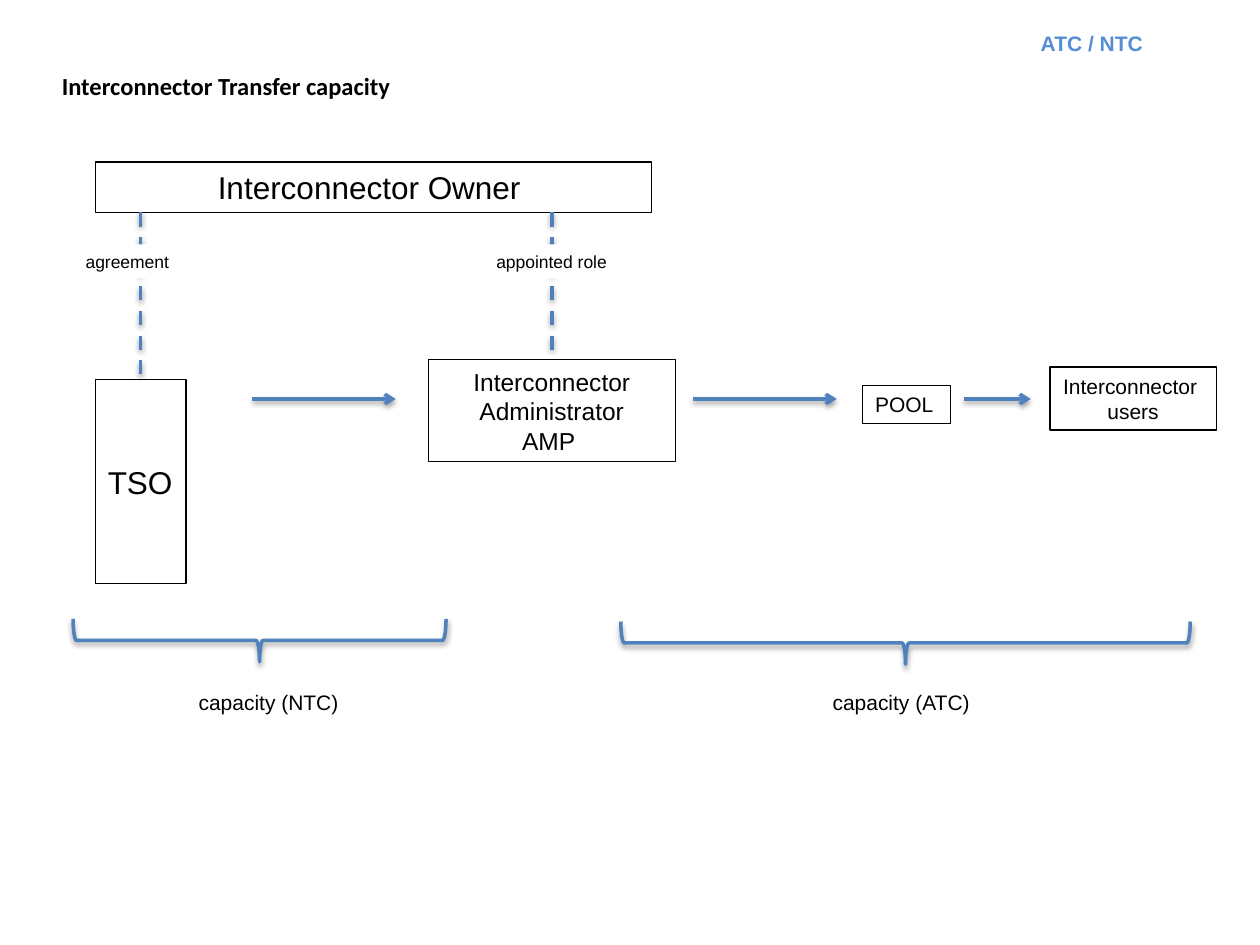
import pptx
import pptx.util
import pptx.dml.color
import pptx.enum.dml
import pptx.enum.shapes
import pptx.enum.text
import pptx.oxml
import pptx.oxml.ns

Pt = pptx.util.Pt
SHAPE = pptx.enum.shapes.MSO_SHAPE
ALIGN = pptx.enum.text.PP_ALIGN
ANCHOR = pptx.enum.text.MSO_ANCHOR
RGB = pptx.dml.color.RGBColor.from_string

theme = {
    "ink": RGB("000000"), "paper": RGB("FFFFFF"),
    "blue": RGB("4F81BD"), "header": RGB("558ED5"),
    "large": Pt(18), "medium": Pt(14), "normal": Pt(12), "small": Pt(10),
    "outline": Pt(0.75), "stroke": Pt(2),
}


def write(sp, lines, size, align=ALIGN.LEFT, wrap=True, anchor=ANCHOR.TOP, **font):
    tf = sp.text_frame
    tf.word_wrap, tf.vertical_anchor = wrap, anchor
    tf.text = "\n".join(lines)
    style = {"name": "Arial", "size": theme[size], "bold": False, **font}
    color = style.pop("color", "ink")
    for p in tf.paragraphs:
        p.alignment = align
        for r in p.runs:
            for key, value in style.items():
                setattr(r.font, key, value)
            r.font.color.rgb = theme[color]


def stroke(sp):
    sp.line.color.rgb = theme["blue"]
    sp.line.width = theme["stroke"]
    spPr = sp._element.spPr
    for old in spPr.findall(pptx.oxml.ns.qn("a:effectLst")):
        spPr.remove(old)
    spPr.append(pptx.oxml.parse_xml(
        f'<a:effectLst {pptx.oxml.ns.nsdecls("a")}>'
        '<a:outerShdw blurRad="40000" dist="20000" dir="5400000" rotWithShape="0">'
        '<a:srgbClr val="000000"><a:alpha val="38000"/></a:srgbClr>'
        '</a:outerShdw></a:effectLst>'))


prs = pptx.Presentation()
prs.slide_width, prs.slide_height = Pt(720), Pt(540)
s = prs.slides.add_slide(prs.slide_layouts[5])

title = s.shapes.title
frame = {"left": 28.1, "top": 36.7, "width": 226.8, "height": 24.5}
for key, value in frame.items():
    setattr(title, key, Pt(value))
write(title, ["Interconnector Transfer capacity"], "medium", name="Calibri", bold=True)
title.text_frame.auto_size = pptx.enum.text.MSO_AUTO_SIZE.NONE

boxes = {}
for name, lines, size, align, wrap, rect in [
    ("owner", ["Interconnector Owner "], "large", ALIGN.CENTER, True, (54.7, 92.6, 317.5, 28.8)),
    ("admin", ["Interconnector Administrator", "AMP "], "medium", ALIGN.CENTER, True,
     (244.8, 205.6, 141.1, 58.3)),
    ("tso", ["TSO"], "large", ALIGN.LEFT, False, (54.5, 217, 51.8, 116.6)),
    ("market", ["POOL"], "normal", ALIGN.LEFT, False, (493, 220.3, 50.4, 21.6)),
    ("users", ["Interconnector ", "users"], "normal", ALIGN.CENTER, False,
     (600, 209.8, 95, 36)),
]:
    sp = s.shapes.add_shape(SHAPE.RECTANGLE, *map(Pt, rect))
    sp.shadow.inherit = False
    sp.fill.background()
    sp.line.color.rgb, sp.line.width = theme["ink"], theme["outline"]
    write(sp, lines, size, align, wrap, ANCHOR.MIDDLE)
    boxes[name] = sp

flow_y = Pt(228)
for x1, x2 in [(144.3, 226.1), (396, 478.1), (550.6, 589)]:
    arrow = s.shapes.add_connector(
        pptx.enum.shapes.MSO_CONNECTOR.STRAIGHT, Pt(x1), flow_y, Pt(x2), flow_y)
    stroke(arrow)
    arrow.line._get_or_add_ln().append(pptx.oxml.parse_xml(
        f'<a:tailEnd {pptx.oxml.ns.nsdecls("a")} type="arrow"/>'))

owner_bottom = boxes["owner"].top + boxes["owner"].height
for name in ["admin", "tso"]:
    box = boxes[name]
    x = box.left + box.width // 2
    link = s.shapes.add_connector(
        pptx.enum.shapes.MSO_CONNECTOR.STRAIGHT, x, owner_bottom, x, box.top)
    link.end_connect(box, 0)
    stroke(link)
    link.line.dash_style = pptx.enum.dml.MSO_LINE.DASH

for text, left, width in [("appointed role", 276.5, 77.8), ("agreement", 41.8, 65.5)]:
    label = s.shapes.add_shape(SHAPE.RECTANGLE, Pt(left), Pt(139.7), Pt(width), Pt(19.4))
    label.shadow.inherit = False
    label.fill.solid()
    label.fill.fore_color.rgb = theme["paper"]
    label.line.fill.background()
    write(label, [text], "small", wrap=False)

for left, top, length in [(136.1, 259.4, 213.1), (505.2, 204.7, 325.4)]:
    brace = s.shapes.add_shape(SHAPE.LEFT_BRACE, Pt(left), Pt(top), Pt(24.5), Pt(length))
    brace.rotation = 270
    brace.fill.background()
    stroke(brace)

for text, rect, align, wrap, font in [
    ("capacity (NTC)", (106.4, 390.5, 95, 21.6), ALIGN.LEFT, False, {}),
    ("capacity (ATC)", (468.7, 390.5, 93.6, 21.6), ALIGN.LEFT, False, {}),
    ("ATC / NTC", (62.6, 14.2, 597.6, 21.6), ALIGN.RIGHT, True,
     {"bold": True, "color": "header"}),
]:
    sp = s.shapes.add_textbox(*map(Pt, rect))
    write(sp, [text], "normal", align, wrap, **font)

prs.save("out.pptx")
